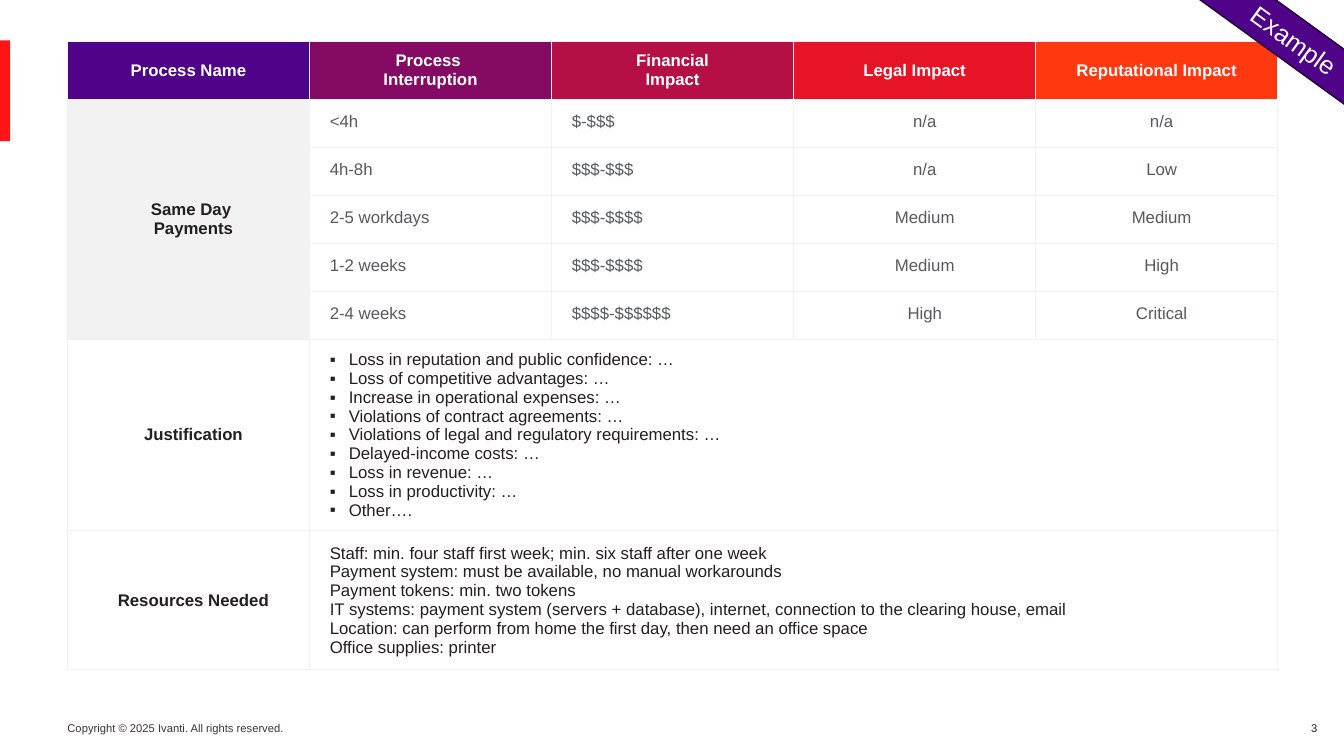
"""Build a business impact analysis slide with a process table and a corner banner."""
from copy import deepcopy

from lxml import etree
from pptx import Presentation
from pptx.dml.color import RGBColor
from pptx.enum.shapes import MSO_SHAPE
from pptx.enum.text import MSO_ANCHOR, PP_ALIGN
from pptx.oxml.ns import qn
from pptx.util import Cm, Pt

LEFT, CENTER, RIGHT = PP_ALIGN.LEFT, PP_ALIGN.CENTER, PP_ALIGN.RIGHT
MIDDLE = MSO_ANCHOR.MIDDLE
RECTANGLE = MSO_SHAPE.RECTANGLE
WHITE, INK, GREY, PALE, PURPLE = "FFFFFF", "231F20", "555960", "F2F2F2", "4E0389"


def color(value):
    return RGBColor.from_string(value)


def write(paragraph, text, size, text_color, bold=False, **layout):
    paragraph.text = text
    for name, value in layout.items():
        setattr(paragraph, name, value)
    for run in paragraph.runs:
        for name, value in {"name": "Arial", "size": Pt(size), "bold": bold}.items():
            setattr(run.font, name, value)
        run.font.color.rgb = color(text_color)
    for line_break in paragraph._p.findall(qn("a:br")):
        line_break.append(deepcopy(paragraph.runs[0].font._element))


presentation = Presentation()
presentation.slide_width, presentation.slide_height = Cm(33.87), Cm(19.05)
slide = presentation.slides.add_slide(presentation.slide_layouts[6])

footers = [
    (1.7, 5.8, "Copyright © 2025 Ivanti. All rights reserved.", "3B3436", LEFT, False),
    (32.23, 1.22, "3", INK, RIGHT, True),
]
for left, width, text, text_color, alignment, wrap in footers:
    frame = slide.shapes.add_textbox(Cm(left), Cm(18.06), Cm(width), Cm(0.61)).text_frame
    frame.margin_left, frame.word_wrap = 0, wrap
    write(frame.paragraphs[0], text, 8, text_color, alignment=alignment)

accent = slide.shapes.add_shape(RECTANGLE, 0, Cm(1.02), Cm(0.26), Cm(2.54))
accent.shadow.inherit = False
accent.fill.solid()
accent.fill.fore_color.rgb = color("FF1515")
accent.line.fill.background()

headers = [
    ("Process Name", PURPLE),
    ("Process \vInterruption", "850A64"),
    ("Financial\vImpact", "B60F45"),
    ("Legal Impact", "E71326"),
    ("Reputational Impact", "FF380F"),
]
impacts = [
    ("<4h", "$-$$$", "n/a", "n/a"),
    ("4h-8h", "$$$-$$$", "n/a", "Low"),
    ("2-5 workdays", "$$$-$$$$", "Medium", "Medium"),
    ("1-2 weeks", "$$$-$$$$", "Medium", "High"),
    ("2-4 weeks", "$$$$-$$$$$$", "High", "Critical"),
]
justifications = [
    "Loss in reputation and public confidence: …",
    "Loss of competitive advantages: …",
    "Increase in operational expenses: …",
    "Violations of contract agreements: …",
    "Violations of legal and regulatory requirements: …",
    "Delayed-income costs: …",
    "Loss in revenue: …",
    "Loss in productivity: …",
    "Other….",
]
resources = [
    "Staff: min. four staff first week; min. six staff after one week",
    "Payment system: must be available, no manual workarounds",
    "Payment tokens: min. two tokens",
    "IT systems: payment system (servers + database), internet, connection to the clearing house, email",
    "Location: can perform from home the first day, then need an office space",
    "Office supplies: printer",
]
row_heights = [1.46] + [1.21] * len(impacts) + [4.82, 3.51]

table = slide.shapes.add_table(len(row_heights), len(headers), Cm(1.7), Cm(1.04),
                               Cm(30.5), Cm(sum(row_heights))).table
table.first_row = table.horz_banding = False
for row, height in zip(table.rows, row_heights):
    row.height = Cm(height)
for column in table.columns:
    column.width = Cm(6.1)

cell_format = {"vertical_anchor": MIDDLE, "margin_right": 0, "margin_top": 0, "margin_bottom": 0}
for row_index in range(len(row_heights)):
    for column_index, (header, header_color) in enumerate(headers):
        cell = table.cell(row_index, column_index)
        for name, value in cell_format.items():
            setattr(cell, name, value)
        indent = 0.25 if column_index in (0, 4) else 0.51
        cell.margin_left = Cm(indent if row_index else 0)
        properties = cell._tc.get_or_add_tcPr()
        for side in ("a:lnL", "a:lnR", "a:lnT", "a:lnB"):
            border = etree.SubElement(properties, qn(side), w=str(Pt(1)))
            border_fill = etree.SubElement(border, qn("a:solidFill"))
            etree.SubElement(border_fill, qn("a:srgbClr"), val=PALE)
        cell.fill.solid()
        fill = WHITE if row_index else header_color
        cell.fill.fore_color.rgb = color(PALE if (row_index, column_index) == (1, 0) else fill)

for column_index, (header, _) in enumerate(headers):
    write(table.cell(0, column_index).text_frame.paragraphs[0], header, 12, WHITE, True,
          alignment=CENTER, space_after=Pt(6.8 if column_index else 0))

for row_index, values in enumerate(impacts, 1):
    for column_index, value in enumerate(values, 1):
        write(table.cell(row_index, column_index).text_frame.paragraphs[0], value, 12, GREY,
              alignment=CENTER if column_index > 2 else LEFT,
              line_spacing=Pt(11.2), space_after=Pt(6.8))

table.cell(1, 0).merge(table.cell(5, 0))
for row_index, label in ((1, "Same Day \vPayments"), (6, "Justification"), (7, "Resources Needed")):
    write(table.cell(row_index, 0).text_frame.paragraphs[0], label, 12, INK, True, alignment=CENTER)
    if row_index > 5:
        table.cell(row_index, 1).merge(table.cell(row_index, 4))

justification_frame = table.cell(6, 1).text_frame
for index, text in enumerate(justifications):
    paragraph = justification_frame.add_paragraph() if index else justification_frame.paragraphs[0]
    paragraph_properties = paragraph._p.get_or_add_pPr()
    paragraph_properties.set("marL", str(Cm(0.48)))
    paragraph_properties.set("indent", str(-Cm(0.48)))
    etree.SubElement(paragraph_properties, qn("a:buFont"), typeface="Arial")
    etree.SubElement(paragraph_properties, qn("a:buChar"), char="▪")
    write(paragraph, text, 12, INK)

write(table.cell(7, 1).text_frame.paragraphs[0], "\v".join(resources), 12, INK)

banner = slide.shapes.add_shape(RECTANGLE, Cm(29.36), Cm(0.46), Cm(6.5), Cm(1.12))
banner.rotation = 35.9
banner.shadow.inherit = False
banner.fill.solid()
banner.fill.fore_color.rgb = color(PURPLE)
banner.line.color.rgb = color("22013C")
banner.line.width = Pt(1)
banner.text_frame.vertical_anchor = MIDDLE
write(banner.text_frame.paragraphs[0], "Example", 18, WHITE, alignment=CENTER)

presentation.save("out.pptx")
